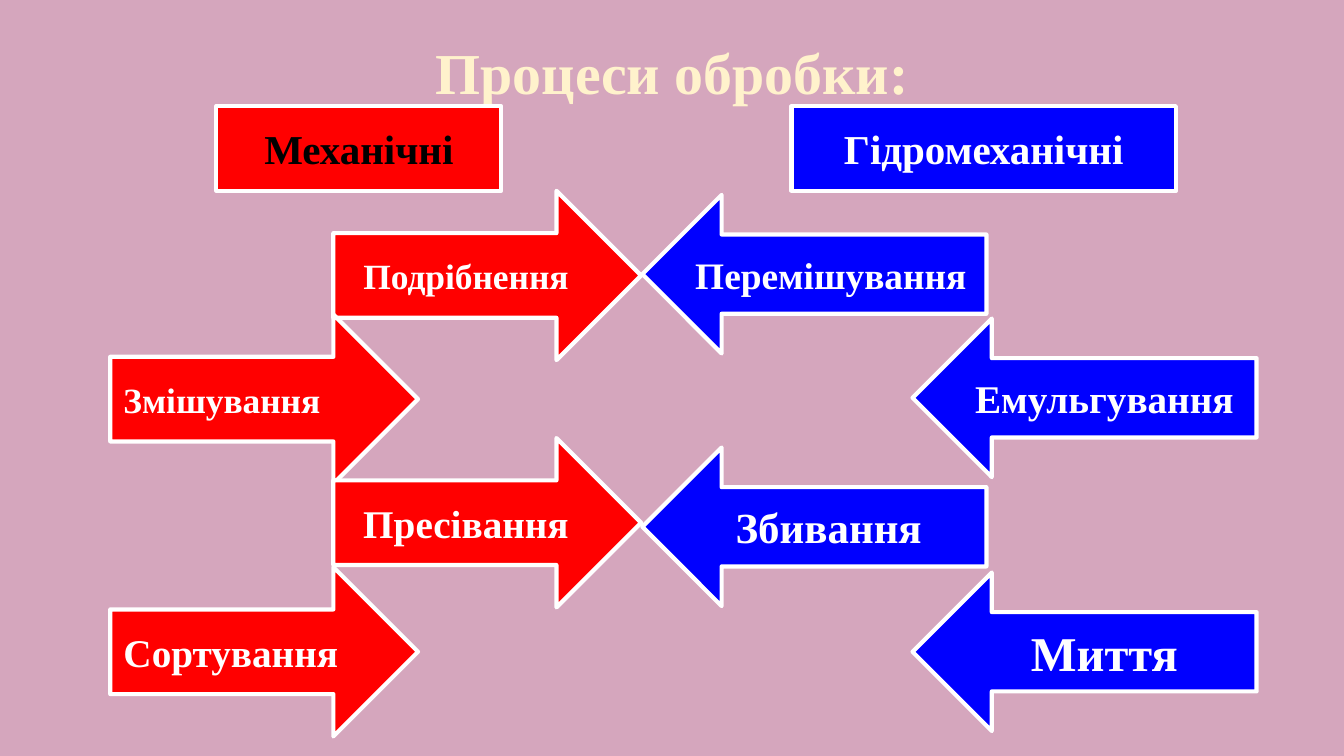
import pptx
import pptx.util
import pptx.dml.color
import pptx.enum.shapes
import pptx.enum.text
from dataclasses import dataclass

Inches, Pt = pptx.util.Inches, pptx.util.Pt
RGB = pptx.dml.color.RGBColor.from_string
Kind = pptx.enum.shapes.MSO_SHAPE
Align = pptx.enum.text.PP_ALIGN
Anchor = pptx.enum.text.MSO_ANCHOR


@dataclass(frozen=True)
class Theme:
    back: str = "D5A6BD"
    cream: str = "FFF2CC"
    red: str = "FF0000"
    blue: str = "0000FF"
    white: str = "FFFFFF"
    black: str = "000000"
    face: str = "Times New Roman"
    title: int = 31
    head: int = 22
    edge: float = 2.25
    pad: float = 0.1


THEME = Theme()


def put(item, values):
    for name, value in values.items():
        setattr(item, name, value)


def write(shape, text, size, color, align=Align.CENTER, anchor=Anchor.MIDDLE):
    frame = shape.text_frame
    pad = Inches(THEME.pad)
    put(frame, dict(word_wrap=True, vertical_anchor=anchor, margin_left=pad,
                    margin_right=pad, margin_top=pad, margin_bottom=pad))
    line = frame.paragraphs[0]
    line.alignment = align
    run = line.add_run()
    run.text = text
    put(run.font, dict(name=THEME.face, size=Pt(size), bold=True))
    run.font.color.rgb = RGB(color)


def block(slide, kind, box, fill):
    shape = slide.shapes.add_shape(kind, *map(Inches, box))
    shape.shadow.inherit = False
    shape.fill.solid()
    shape.fill.fore_color.rgb = RGB(fill)
    shape.line.color.rgb = RGB(THEME.white)
    shape.line.width = Pt(THEME.edge)
    return shape


def title(slide, box, text):
    shape = slide.shapes.add_textbox(*map(Inches, box))
    write(shape, text, THEME.title, THEME.cream, anchor=Anchor.TOP)


def header(slide, box, text, fill, color):
    write(block(slide, Kind.RECTANGLE, box, fill), text, THEME.head, color)


def arrows(slide, box, kind, fill, size, steps):
    """Place arrows at (dx, dy) steps from the corner of the box."""
    left, top = box
    for dx, dy, text, points, align in steps:
        shape = block(slide, kind, (left + dx, top + dy, *size), fill)
        write(shape, text, points, THEME.white, align)


def main():
    deck = pptx.Presentation()
    # Widescreen, 16:9
    wide = Inches(10)
    put(deck, dict(slide_width=wide, slide_height=wide * 9 // 16))
    slide = deck.slides.add_slide(deck.slide_layouts[6])
    slide.background.fill.solid()
    slide.background.fill.fore_color.rgb = RGB(THEME.back)

    title(slide, (0.34, 0.17, 9.32, 0.63), "Процеси обробки:")

    # Mechanical processes
    header(slide, (1.61, 0.79, 2.12, 0.63), "Механічні", THEME.red, THEME.black)
    arrows(slide, (0.82, 1.42), Kind.RIGHT_ARROW, THEME.red, (2.29, 1.26), [
        (1.66, 0, "Подрібнення", 19, Align.CENTER),
        (0, 2.8, "Сортування", 21, Align.LEFT),
        (0, 0.92, "Змішування", 19, Align.LEFT),
        (1.66, 1.84, "Пресівання", 21, Align.CENTER),
    ])

    # Hydromechanical processes
    header(slide, (5.89, 0.79, 2.86, 0.63), "Гідромеханічні", THEME.blue, THEME.white)
    arrows(slide, (4.78, 1.45), Kind.LEFT_ARROW, THEME.blue, (2.56, 1.18), [
        (0, 0, "Перемішування", 20, Align.LEFT),
        (2.01, 0.92, "Емульгування", 21, Align.CENTER),
        (0, 1.88, "Збивання ", 23, Align.CENTER),
        (2.01, 2.81, "Миття", 26, Align.CENTER),
    ])

    deck.save("out.pptx")


if __name__ == "__main__":
    main()
